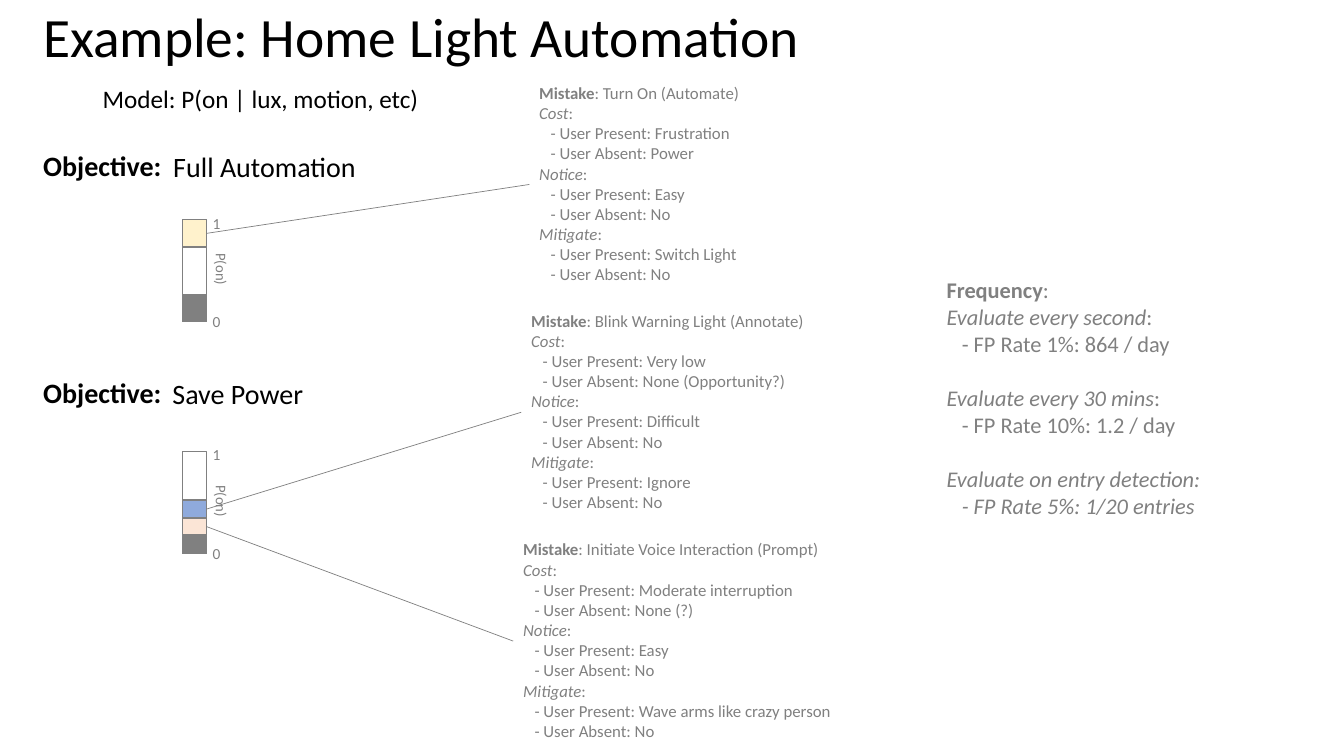
from pptx import Presentation
from pptx import util as u
from pptx.dml.color import RGBColor
from pptx.enum import shapes, text
from pptx.oxml.ns import qn
from lxml import etree

COLORS = {"black": "000000", "gray": "808080", "yellow": "FFF2CC",
          "blue": "8FAADC", "peach": "FBE5D6"}
BAR_LEFT, BAR_WIDTH, BAR_HEIGHT = 1.81, 0.24, 1.01


def write(shape, lines, size, color="black", wrap=False, grow=True):
    """Fill shape with lines, each a plain string or (emphasised, plain).

    The emphasis is bold on the first line and italic on the others.
    Lines that start with a dash are indented.
    """
    frame = shape.text_frame
    frame.word_wrap = wrap
    frame.auto_size = (text.MSO_AUTO_SIZE.SHAPE_TO_FIT_TEXT if grow
                       else text.MSO_AUTO_SIZE.NONE)
    for number, line in enumerate(lines):
        paragraph = frame.paragraphs[0] if number == 0 else frame.add_paragraph()
        paragraph.alignment = text.PP_ALIGN.LEFT
        paragraph.font.size = u.Pt(size)
        paragraph.font.name = "Calibri"
        paragraph.font.color.rgb = RGBColor.from_string(COLORS[color])
        emphasised, plain = ("", line) if isinstance(line, str) else line
        if emphasised:
            run = paragraph.add_run()
            run.text = emphasised
            if number == 0:
                run.font.bold = True
            else:
                run.font.italic = True
        if plain:
            paragraph.add_run().text = plain
        if paragraph.text.startswith("- "):
            indent = u.Pt(size * 0.68)
            paragraph._p.get_or_add_pPr().set("marL", str(indent))


def add_text(left, top, width, height, lines, size, color="black", **options):
    box = slide.shapes.add_textbox(u.Inches(left), u.Inches(top),
                                   u.Inches(width), u.Inches(height))
    write(box, lines, size, color, **options)
    return box


presentation = Presentation()
presentation.slide_width = u.Inches(13.33)
presentation.slide_height = u.Inches(7.5)
slide = presentation.slides.add_slide(presentation.slide_layouts[1])

# Title and the second objective
title, save_power = slide.shapes.title, slide.placeholders[1]
placeholders = [
    (title, (0.33, 0.16, 12.39, 0.47), "Example: Home Light Automation", 39.6),
    (save_power, (1.61, 3.66, 2.44, 0.46), "Save Power", 20),
]
for placeholder, place, words, size in placeholders:
    placeholder.left, placeholder.top, placeholder.width, placeholder.height = map(
        u.Inches, place)
    write(placeholder, [words], size, wrap=True, grow=False)
    placeholder.text_frame.paragraphs[0].line_spacing = 0.9
title.text_frame.vertical_anchor = text.MSO_ANCHOR.MIDDLE
save_power.text_frame.vertical_anchor = text.MSO_ANCHOR.BOTTOM
paragraph = save_power.text_frame.paragraphs[0]
paragraph.space_before = u.Pt(10)
properties = paragraph._p.get_or_add_pPr()
properties.set("marL", "0")
properties.set("indent", "0")
etree.SubElement(properties, qn("a:buNone"))

# Model and objective labels
add_text(0.92, 0.78, 3.37, 0.4, ["Model: P(on | lux, motion, etc)"], 18)
add_text(1.62, 1.43, 2.03, 0.44, ["Full Automation"], 20)
for top in (1.35, 3.6):
    objective = add_text(0.33, top, 3.96, 0.51, [("Objective:", "")], 20,
                         wrap=True, grow=False)
    objective.text_frame.vertical_anchor = text.MSO_ANCHOR.BOTTOM
    objective.text_frame.paragraphs[0].line_spacing = 0.9
    objective.text_frame.paragraphs[0].space_before = u.Pt(10)

# Probability bars: top of the bar, then (offset, height, fill) of each segment
bars = [
    (2.18, [(0, BAR_HEIGHT, None), (0, 0.27, "yellow"), (0.74, 0.27, "gray")]),
    (4.48, [(0, BAR_HEIGHT, None), (0.84, 0.17, "gray"),
            (0.66, 0.17, "peach"), (0.48, 0.18, "blue")]),
]
segments = {}
for bar_top, parts in bars:
    for offset, height, fill in parts:
        segment = slide.shapes.add_shape(
            shapes.MSO_SHAPE.RECTANGLE, u.Inches(BAR_LEFT),
            u.Inches(bar_top + offset), u.Inches(BAR_WIDTH), u.Inches(height))
        segment.shadow.inherit = False
        segment.line.color.rgb = RGBColor.from_string(COLORS["gray"])
        segment.line.width = u.Pt(1)
        if fill:
            segment.fill.solid()
            segment.fill.fore_color.rgb = RGBColor.from_string(COLORS[fill])
            segments[fill] = segment
        else:
            segment.fill.background()
    axis = add_text(1.92, bar_top + 0.36, 0.54, 0.29, ["P(on)"], 10.5, "gray")
    axis.rotation = 90
    for label, offset in (("1", -0.11), ("0", 0.87)):
        add_text(2.01, bar_top + offset, 0.28, 0.29, [label], 11, "gray")

# Mistakes: segment, place, name, costs, notice when present, mitigation when present
mistakes = [
    ("yellow", 5.25, 0.77, 2.26, "Turn On (Automate)",
     "Frustration", "Power", "Easy", "Switch Light"),
    ("blue", 5.17, 3.03, 2.98, "Blink Warning Light (Annotate)",
     "Very low", "None (Opportunity?)", "Difficult", "Ignore"),
    ("peach", 5.09, 5.3, 3.51, "Initiate Voice Interaction (Prompt)",
     "Moderate interruption", "None (?)", "Easy", "Wave arms like crazy person"),
]
for fill, left, top, width, name, cost, absent_cost, notice, mitigation in mistakes:
    lines = [("Mistake", f": {name}")]
    for heading, present, absent in (("Cost", cost, absent_cost),
                                     ("Notice", notice, "No"),
                                     ("Mitigate", mitigation, "No")):
        lines += [(heading, ":"), f"- User Present: {present}",
                  f"- User Absent: {absent}"]
    box = add_text(left, top, width, 2.12, lines, 12, "gray", wrap=True)
    connector = slide.shapes.add_connector(shapes.MSO_CONNECTOR.STRAIGHT, 0, 0, 0, 0)
    connector.begin_connect(segments[fill], 3)
    connector.end_connect(box, 1)
    connector.line.color.rgb = RGBColor.from_string(COLORS["gray"])
    connector.line.width = u.Pt(0.5)
    etree.SubElement(connector._element.spPr, qn("a:effectLst"))

# Frequency
frequency = add_text(9.29, 2.69, 3.03, 2.52, [
    ("Frequency", ":"),
    ("Evaluate every second", ":"),
    "- FP Rate 1%: 864 / day",
    ("Evaluate every 30 mins", ":"),
    "- FP Rate 10%: 1.2 / day",
    ("Evaluate on entry detection:", ""),
    ("- FP Rate 5%: 1/20 entries", ""),
], 16, "gray", wrap=True)
for number in (2, 4):
    frequency.text_frame.paragraphs[number].space_after = u.Pt(19.5)

presentation.save("out.pptx")
